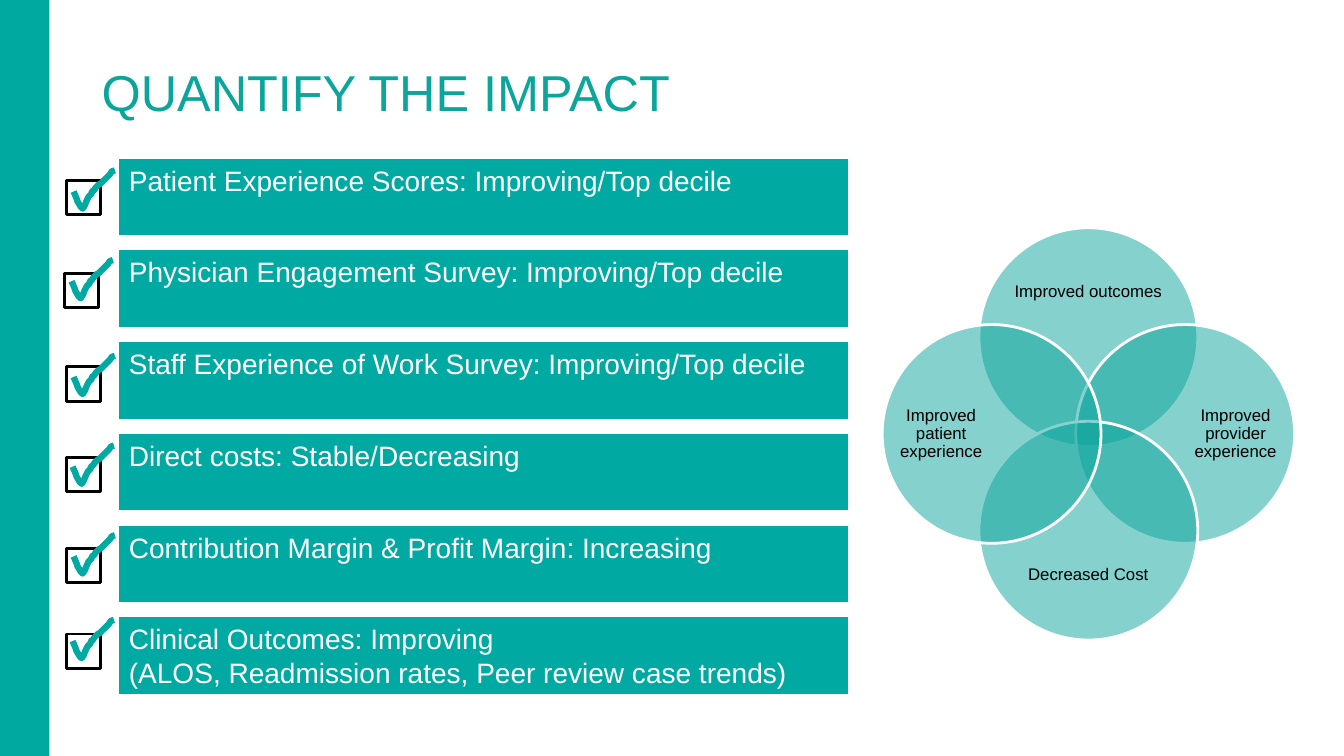
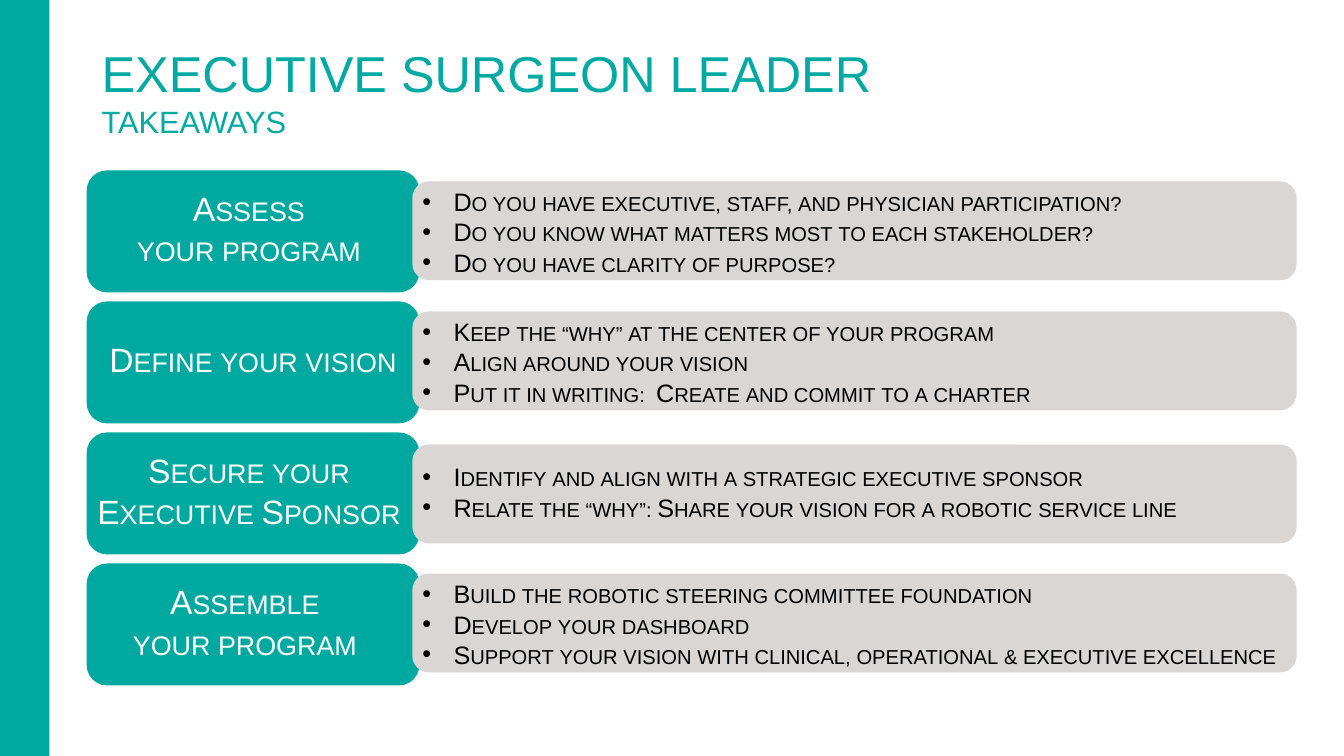
"""Builds two slides on measuring and leading a surgical program."""
from lxml import etree
from pptx import Presentation
from pptx.dml.color import RGBColor
from pptx.enum import shapes, text
from pptx.oxml import ns
from pptx.util import Pt

PX = 9144
WIDE, HIGH = 1333, 750
FONT = "Arial"
HUE = {"band": "00A9A0", "teal": "00AAA3", "venn": "0BA59C",
       "card": "D9D6D4", "white": "FFFFFF", "black": "000000"}
KIND = shapes.MSO_SHAPE
MID, TOP = text.MSO_ANCHOR.MIDDLE, text.MSO_ANCHOR.TOP
LEFT, MIDST = text.PP_ALIGN.LEFT, text.PP_ALIGN.CENTER

GOALS = [
    (["Patient Experience Scores: Improving/Top decile"], (66, 179), (73, 169)),
    (["Physician Engagement Survey: Improving/Top decile"], (64, 271), (71, 258)),
    (["Staff Experience of Work Survey: Improving/Top decile"], (66, 364), (73, 353)),
    (["Direct costs: Stable/Decreasing"], (66, 454), (72, 442)),
    (["Contribution Margin & Profit Margin: Increasing"], (66, 544), (73, 531)),
    (["Clinical Outcomes: Improving",
      "(ALOS, Readmission rates, Peer review case trends)"], (66, 629), (72, 615)),
]
TICK = [(0, 21), (3, 28), (4, 31), (7, 36), (9, 38), (11, 35), (13, 30),
        (15, 26), (18, 23), (18, 21), (20, 20), (22, 17), (25, 14), (27, 13),
        (30, 10), (32, 8), (34, 6), (36, 4), (38, 1), (41, 0)]
VENN = [
    ("Improved outcomes", (0, -1), (996, 255, 167, 69)),
    ("Improved provider experience", (1, 0), (1184, 347, 83, 167)),
    ("Decreased Cost", (0, 1), (996, 536, 167, 69)),
    ("Improved patient experience", (-1, 0), (892, 347, 83, 167)),
]
STEPS = [
    (["Assess", "your program"], 4, 180,
     ["Do you have executive, staff, and physician participation?",
      "Do you know what matters most to each stakeholder?",
      "Do you have clarity of purpose?"]),
    (["Define your vision"], 0, 309,
     ["Keep the “why” at the center of your program",
      "Align around your vision",
      "Put it in writing:\u00a0 Create and commit to a charter"]),
    (["Secure your", "Executive Sponsor"], 4, 441,
     ["Identify and align with a strategic executive sponsor",
      "Relate the “why”: Share your vision for a robotic service line"]),
    (["Assemble", "your program"], 8, 569,
     ["Build the robotic steering committee foundation",
      "Develop your dashboard",
      "Support your vision with clinical, operational & executive excellence"]),
]


def tint(name):
    return RGBColor.from_string(HUE[name])


def write(shape, lines, size=20, hue="white", align=LEFT, anchor=TOP,
          pad=(10, 5, 10, 5), small=False, dots=False, space=None):
    frame = shape.text_frame
    frame.word_wrap = True
    frame.vertical_anchor = anchor
    (frame.margin_left, frame.margin_top,
     frame.margin_right, frame.margin_bottom) = [n * PX for n in pad]
    sizes = size if isinstance(size, tuple) else (size,) * len(lines)
    for i, (line, pts) in enumerate(zip(lines, sizes)):
        para = frame.add_paragraph() if i else frame.paragraphs[0]
        para.alignment = align
        if space:
            para.line_spacing = space
        if dots:
            props = para._p.get_or_add_pPr()
            props.set("marL", str(31 * PX))
            props.set("indent", str(-31 * PX))
            etree.SubElement(props, ns.qn("a:buFont")).set("typeface", FONT)
            etree.SubElement(props, ns.qn("a:buChar")).set("char", "•")
        run = para.add_run()
        run.text = line
        run.font.name, run.font.size = FONT, Pt(pts)
        run.font.color.rgb = tint(hue)
        if small:
            run._r.get_or_add_rPr().set("cap", "small")


def paint(shape, fill=None, line=None, width=1, alpha=None):
    shape.shadow.inherit = False
    if fill:
        shape.fill.solid()
        shape.fill.fore_color.rgb = tint(fill)
        if alpha:
            tone = shape.fill._xPr.find(".//" + ns.qn("a:srgbClr"))
            etree.SubElement(tone, ns.qn("a:alpha")).set("val", str(alpha * 1000))
    else:
        shape.fill.background()
    if line:
        shape.line.color.rgb = tint(line)
        shape.line.width = Pt(width)
    else:
        shape.line.fill.background()
    return shape


def draw(slide, kind, box, **look):
    return paint(slide.shapes.add_shape(kind, *[n * PX for n in box]), **look)


def label(slide, box, lines, **look):
    write(slide.shapes.add_textbox(*[n * PX for n in box]), lines, **look)


def start(deck, title, size, hue):
    slide = deck.slides.add_slide(deck.slide_layouts[6])
    draw(slide, KIND.RECTANGLE, (0, 0, 49, HIGH), fill="band")
    label(slide, (91, 34, 1242, 113), title, size=size, hue=hue, anchor=MID)
    return slide


def check(slide, box, tick):
    draw(slide, KIND.ACTION_BUTTON_CUSTOM, (*box, 34, 34), line="black", width=2)
    spots = [(tick[0] + x, tick[1] + y) for x, y in TICK]
    pen = slide.shapes.build_freeform(*spots[0], scale=PX)
    pen.add_line_segments(spots[1:], close=False)
    paint(pen.convert_to_shape(), line="teal", width=4.5)


def impact(deck):
    slide = start(deck, ["QUANTIFY THE IMPACT"], 36, "venn")
    for i, (lines, box, tick) in enumerate(GOALS):
        bar = draw(slide, KIND.RECTANGLE, (118, 157 + 91 * i, 724, 77),
                   fill="teal", line="white", width=0.75)
        write(bar, lines, pad=(10, 5, 10, 0))
        check(slide, box, tick)
    for name, (dx, dy), box in VENN:
        draw(slide, KIND.OVAL, (971 + 96 * dx, 322 + 96 * dy, 217, 217),
             fill="venn", alpha=50, line="white", width=2)
        label(slide, box, [name], size=12, hue="black", align=MIDST,
              anchor=MID, pad=(0, 0, 0, 0), space=0.9)


def leader(deck):
    slide = start(deck, ["EXECUTIVE SURGEON LEADER", "TAKEAWAYS"], (36, 22), "teal")
    for i, (name, nudge, _, _) in enumerate(STEPS):
        pill = draw(slide, KIND.ROUNDED_RECTANGLE, (86, 169 + 130 * i, 330, 121),
                    fill="band")
        write(pill, name, size=24, align=MIDST, anchor=MID, small=True,
              pad=(0, 0, 2 * nudge, 6))
    for _, _, top, points in STEPS:
        box = (409, top, 877, 98)
        draw(slide, KIND.ROUNDED_RECTANGLE, box, fill="card")
        label(slide, box, points, size=18, hue="black", anchor=MID, small=True,
              dots=True, pad=(10, 2, 10, 6 * (3 - len(points))))


def main():
    deck = Presentation()
    deck.slide_width, deck.slide_height = WIDE * PX, HIGH * PX
    impact(deck)
    leader(deck)
    deck.save("out.pptx")


if __name__ == "__main__":
    main()
